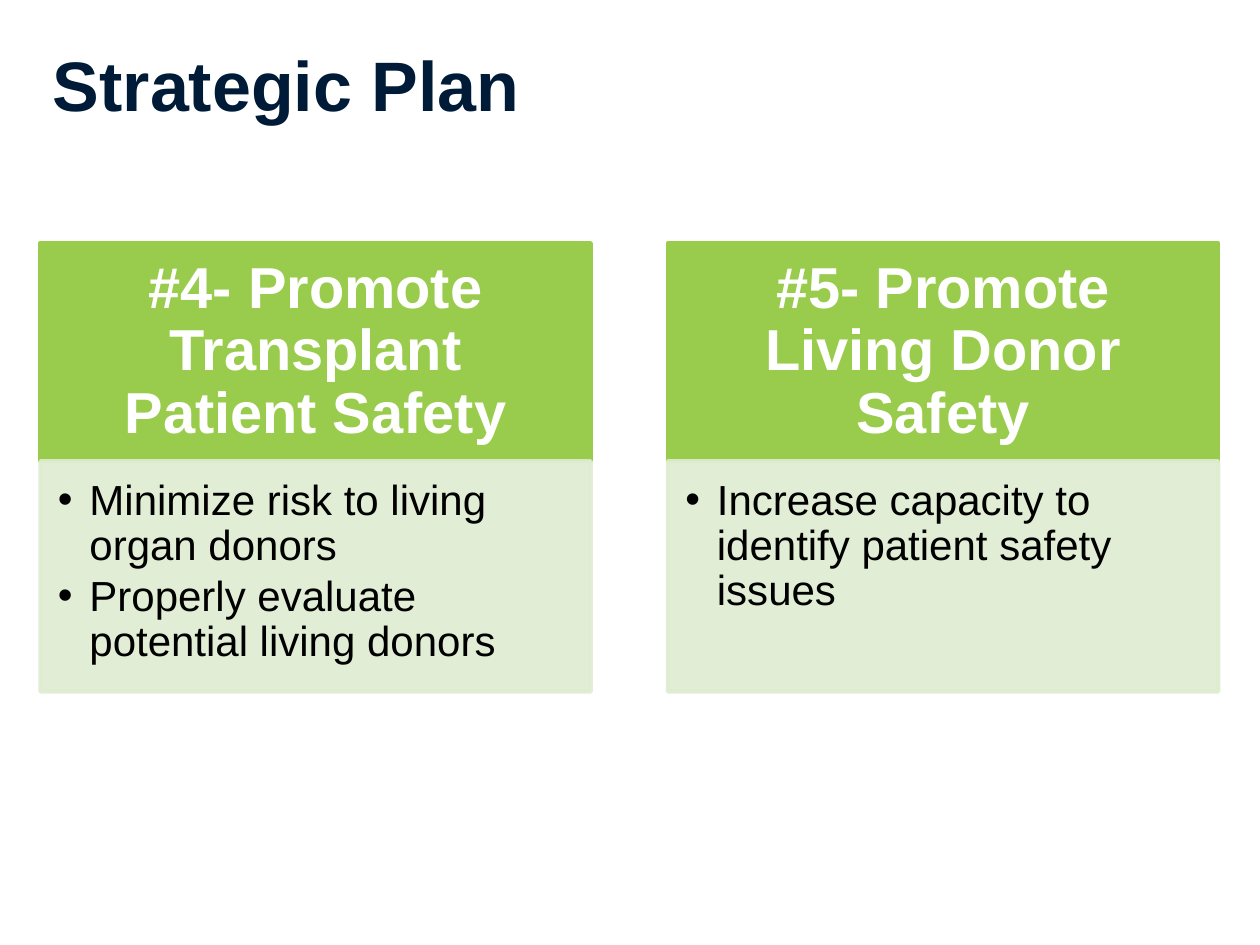
from lxml import etree
from pptx import Presentation
from pptx.dml.color import RGBColor
from pptx.enum.shapes import MSO_SHAPE
from pptx.enum.text import MSO_ANCHOR, PP_ALIGN
from pptx.oxml.ns import qn
from pptx.util import Inches, Pt

RECT = MSO_SHAPE.RECTANGLE
TOP, MIDDLE = MSO_ANCHOR.TOP, MSO_ANCHOR.MIDDLE
LEFT, CENTER = PP_ALIGN.LEFT, PP_ALIGN.CENTER

FONT = "Arial"
NAVY, GREEN, PALE_GREEN = "001B37", "99CC4C", "DEECD0"
WHITE, BLACK = "FFFFFF", "000000"

GOALS = [
    ("#4- Promote Transplant Patient Safety",
     ["Minimize risk to living organ donors",
      "Properly evaluate potential living donors"]),
    ("#5- Promote Living Donor Safety",
     ["Increase capacity to identify patient safety issues"]),
]


def rgb(color):
    return RGBColor.from_string(color)


def add_run(p, text, size, color, bold=False):
    r = p.add_run()
    r.text = text
    r.font.name = FONT
    r.font.size = Pt(size)
    r.font.bold = bold
    r.font.color.rgb = rgb(color)


def set_frame(tf, anchor, insets):
    """Insets are left, top, right, bottom in inches."""
    tf.word_wrap = True
    tf.vertical_anchor = anchor
    (tf.margin_left, tf.margin_top,
     tf.margin_right, tf.margin_bottom) = map(Inches, insets)


def add_panel(slide, x, y, w, h, color, opacity=100):
    sp = slide.shapes.add_shape(RECT, Inches(x), Inches(y), Inches(w), Inches(h))
    sp.shadow.inherit = False
    sp.fill.solid()
    sp.fill.fore_color.rgb = rgb(color)
    sp.line.color.rgb = rgb(color)
    sp.line.width = Pt(2.25)
    if opacity < 100:
        for clr in sp._element.spPr.iter(qn("a:srgbClr")):
            etree.SubElement(clr, qn("a:alpha"), val=str(opacity * 1000))
    return sp


def add_bullet(p, indent):
    pPr = p._p.get_or_add_pPr()
    pPr.set("marL", str(Inches(indent)))
    pPr.set("indent", str(-Inches(indent)))
    etree.SubElement(pPr, qn("a:buFont"), typeface=FONT)
    etree.SubElement(pPr, qn("a:buChar"), char="•")


def add_title(slide, text, x, y, w, h):
    title = slide.shapes.title
    title.left, title.top = Inches(x), Inches(y)
    title.width, title.height = Inches(w), Inches(h)
    tf = title.text_frame
    set_frame(tf, MIDDLE, (0.1, 0.05, 0.1, 0.05))
    p = tf.paragraphs[0]
    p.alignment = LEFT
    add_run(p, text, 40, NAVY, bold=True)


def add_goal(slide, heading, items, x, y, w, h):
    """A green heading panel with a pale panel of bullets under it."""
    head_h = 1.73
    tf = add_panel(slide, x, y, w, head_h, GREEN).text_frame
    set_frame(tf, MIDDLE, (0.26, 0.15, 0.26, 0.15))
    p = tf.paragraphs[0]
    p.alignment = CENTER
    p.line_spacing = 0.9
    add_run(p, heading, 33, WHITE, bold=True)

    body = add_panel(slide, x, y + head_h, w, h - head_h, PALE_GREEN, opacity=90)
    tf = body.text_frame
    set_frame(tf, TOP, (0.14, 0.14, 0.19, 0.21))
    for i, item in enumerate(items):
        p = tf.add_paragraph() if i else tf.paragraphs[0]
        p.alignment = LEFT
        p.line_spacing = 0.9
        p.space_after = Pt(3)
        add_bullet(p, 0.25)
        add_run(p, item, 24, BLACK)


def main():
    prs = Presentation()
    prs.slide_width, prs.slide_height = Inches(10), Inches(7.5)
    slide = prs.slides.add_slide(prs.slide_layouts[5])
    add_title(slide, "Strategic Plan", 0.32, -0.3, 9.56, 1.93)
    left, width, gap = 0.32, 4.37, 0.61
    for i, (heading, items) in enumerate(GOALS):
        add_goal(slide, heading, items, left + i * (width + gap), 1.93, width, 3.56)
    prs.save("out.pptx")


if __name__ == "__main__":
    main()
